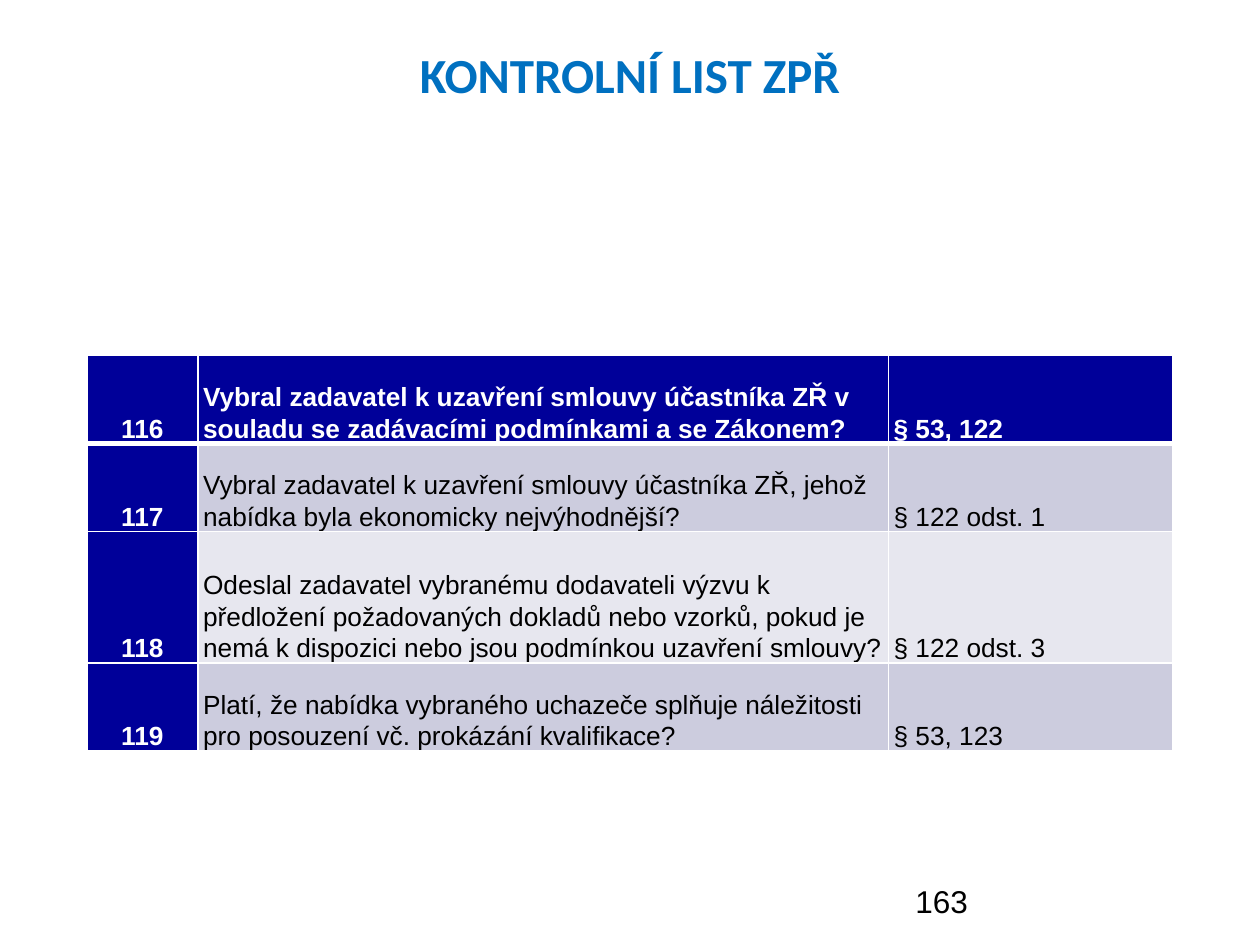
import pptx
import pptx.util
import pptx.dml.color
import pptx.enum.text
import pptx.oxml
import pptx.oxml.ns

Pt = pptx.util.Pt
ALIGN = pptx.enum.text.PP_ALIGN
ANCHOR = pptx.enum.text.MSO_ANCHOR

COLORS = {
    "title": "0070C0",
    "navy": "000099",
    "band_dark": "CCCCDE",
    "band_light": "E7E7EF",
    "white": "FFFFFF",
    "black": "000000",
}

QUESTIONS = [
    ("116", "Vybral zadavatel k uzavření smlouvy účastníka ZŘ v souladu se zadávacími podmínkami a se Zákonem?", "§ 53, 122"),
    ("117", "Vybral zadavatel k uzavření smlouvy účastníka ZŘ, jehož nabídka byla ekonomicky nejvýhodnější?", "§ 122 odst. 1"),
    ("118", "Odeslal zadavatel vybranému dodavateli výzvu k předložení požadovaných dokladů nebo vzorků, pokud je nemá k dispozici nebo jsou podmínkou uzavření smlouvy?", "§ 122 odst. 3"),
    ("119", "Platí, že nabídka vybraného uchazeče splňuje náležitosti pro posouzení vč. prokázání kvalifikace?", "§ 53, 123"),
]


class Deck:
    def __init__(self, slide, font="Arial"):
        self.s = slide
        self.font = font

    def rgb(self, name):
        return pptx.dml.color.RGBColor.from_string(COLORS[name])

    def run(self, p, text, size, color, bold=False, font=None):
        r = p.add_run()
        r.text = text
        r.font.name = font or self.font
        r.font.size = Pt(size)
        r.font.bold = bold
        r.font.color.rgb = self.rgb(color)

    def text(self, box, text, size, color, bold=False, font=None, align=ALIGN.LEFT):
        tf = self.s.shapes.add_textbox(*map(Pt, box)).text_frame
        tf.word_wrap = True
        tf.vertical_anchor = ANCHOR.TOP
        p = tf.paragraphs[0]
        p.alignment = align
        self.run(p, text, size, color, bold, font)

    def borders(self, cell, widths):
        tcPr = cell._tc.get_or_add_tcPr()
        for i, (side, width) in enumerate(widths.items()):
            ln = pptx.oxml.parse_xml(
                f'<a:ln{side} {pptx.oxml.ns.nsdecls("a")} w="{Pt(width)}"><a:solidFill>'
                f'<a:srgbClr val="{COLORS["white"]}"/></a:solidFill></a:ln{side}>')
            tcPr.insert(i, ln)

    def cell(self, cell, text, fill, strong, align, widths):
        cell.margin_left = cell.margin_right = Pt(3)
        cell.margin_top = cell.margin_bottom = 0
        cell.vertical_anchor = ANCHOR.BOTTOM
        cell.fill.solid()
        cell.fill.fore_color.rgb = self.rgb(fill)
        self.borders(cell, widths)
        p = cell.text_frame.paragraphs[0]
        p.alignment = align
        p.line_spacing = 1.07
        self.run(p, text, 15, "white" if strong else "black", strong)

    def table(self, left, top, cols, heights, rows):
        table = self.s.shapes.add_table(
            len(rows), len(cols), Pt(left), Pt(top), Pt(sum(cols)), Pt(sum(heights))).table
        for column, width in zip(table.columns, cols):
            column.width = Pt(width)
        for i, (height, row) in enumerate(zip(heights, rows)):
            table.rows[i].height = Pt(height)
            band = "band_dark" if i % 2 else "band_light"
            widths = {"L": 1, "R": 1, "T": 3 if i == 1 else 1, "B": 3 if i == 0 else 1}
            for j, text in enumerate(row):
                strong = i == 0 or j == 0
                align = ALIGN.CENTER if j == 0 else ALIGN.LEFT
                self.cell(table.cell(i, j), text, "navy" if strong else band, strong, align, widths)


def main():
    prs = pptx.Presentation()
    prs.slide_width, prs.slide_height = Pt(720), Pt(540)
    deck = Deck(prs.slides.add_slide(prs.slide_layouts[6]))
    deck.text((36, 21.6, 648, 90), "KONTROLNÍ LIST ZPŘ", 28, "title", True, "Calibri", ALIGN.CENTER)
    deck.table(49.7, 203.2, (63.4, 394.6, 162.7), (50.3, 50.3, 75, 50.3), QUESTIONS)
    deck.text((516, 500.4, 168, 28.8), "163", 18, "black")
    prs.save("out.pptx")


if __name__ == "__main__":
    main()
